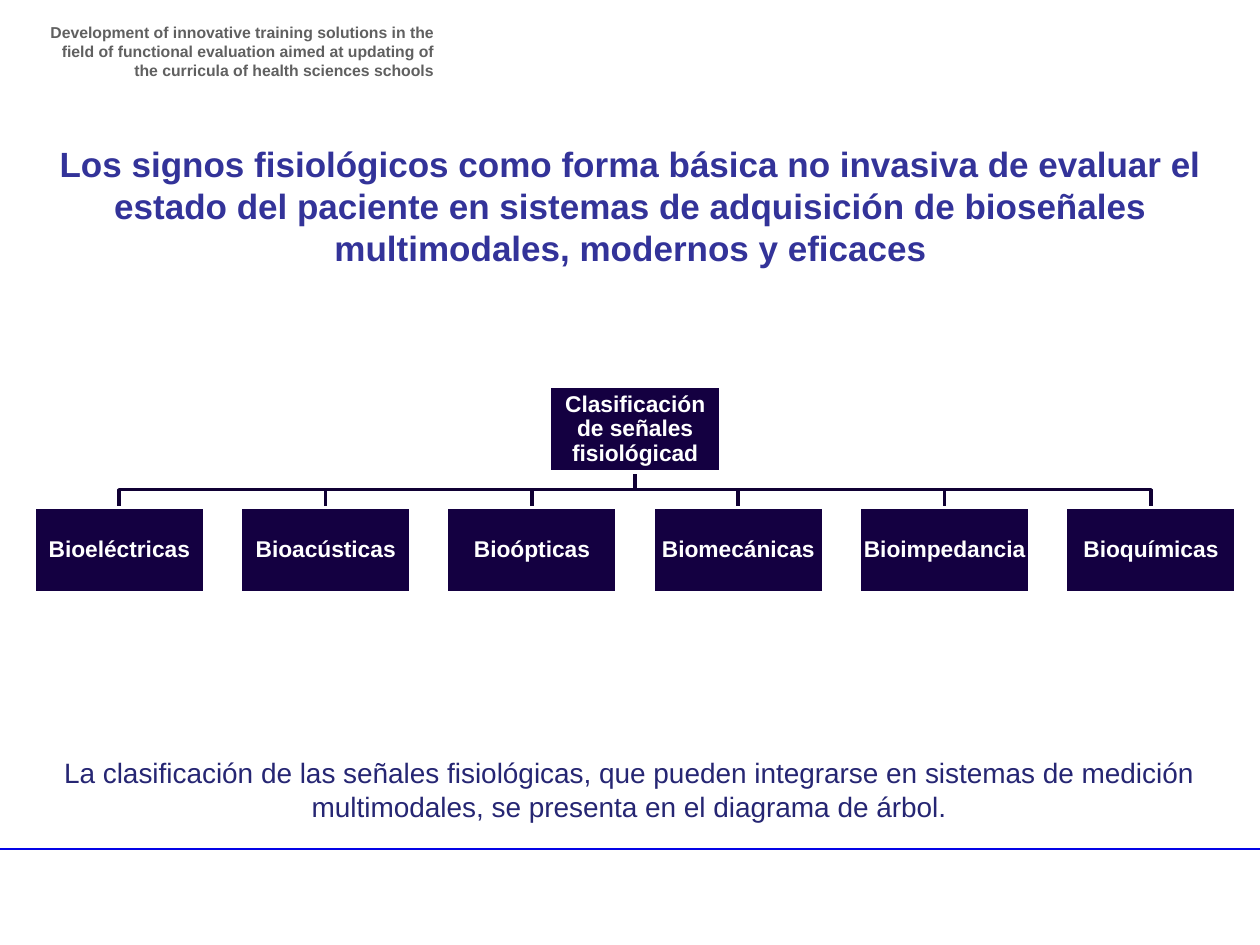
from dataclasses import dataclass

from lxml.etree import SubElement
from pptx import Presentation
from pptx.dml.color import RGBColor
from pptx.enum.shapes import MSO_CONNECTOR as Connector, MSO_SHAPE as Shape
from pptx.enum.text import MSO_ANCHOR as Anchor, MSO_AUTO_SIZE as AutoSize, PP_ALIGN as Align
from pptx.oxml.ns import qn
from pptx.util import Pt


@dataclass(frozen=True)
class Theme:
    font: str = "Arial"
    header: str = "606060"
    title: str = "333399"
    caption: str = "262673"
    box: str = "140041"
    branch: str = "100034"
    rule: str = "0404E6"
    white: str = "FFFFFF"
    header_size: float = 9
    title_size: float = 20
    caption_size: float = 16
    box_size: float = 13
    tree_line: float = 2


@dataclass(frozen=True)
class Node:
    label: str
    left: float
    top: float
    width: float = 97.5
    height: float = 48.7

    @property
    def center(self) -> float:
        return self.left + self.width / 2

    @property
    def bottom(self) -> float:
        return self.top + self.height


THEME = Theme()
LEAF_LEFT, LEAF_TOP, LEAF_PITCH = 19.4, 290, 117.9
ROOT_TOP = 221
SIGNAL_TYPES = ["Bioeléctricas", "Bioacústicas", "Bioópticas",
                "Biomecánicas", "Bioimpedancia", "Bioquímicas"]


def color(code: str) -> RGBColor:
    return RGBColor.from_string(code)


def write(shape, text: str, size: float, ink: str, bold: bool, align: Align) -> None:
    """Set one formatted paragraph in a shape."""
    frame = shape.text_frame
    frame.text = text
    frame.word_wrap = True
    frame.auto_size = AutoSize.NONE
    paragraph = frame.paragraphs[0]
    paragraph.alignment = align
    font = paragraph.runs[0].font
    font.name, font.size, font.bold = THEME.font, Pt(size), bold
    font.color.rgb = color(ink)


def draw_branch(slide, parent: Node, child: Node) -> None:
    """Elbow from the parent's bottom to the child's top."""
    middle = (parent.bottom + child.top) / 2
    builder = slide.shapes.build_freeform(Pt(parent.center), Pt(parent.bottom))
    builder.add_line_segments(
        [(Pt(parent.center), Pt(middle)), (Pt(child.center), Pt(middle)),
         (Pt(child.center), Pt(child.top))], close=False)
    branch = builder.convert_to_shape()
    branch.shadow.inherit = False
    branch.fill.background()
    branch.line.color.rgb = color(THEME.branch)
    branch.line.width = Pt(THEME.tree_line)


def draw_node(slide, node: Node) -> None:
    box = slide.shapes.add_shape(Shape.RECTANGLE, Pt(node.left), Pt(node.top),
                                 Pt(node.width), Pt(node.height))
    box.shadow.inherit = False
    box.fill.solid()
    box.fill.fore_color.rgb = color(THEME.box)
    box.line.color.rgb = color(THEME.white)
    box.line.width = Pt(THEME.tree_line)
    write(box, node.label, THEME.box_size, THEME.white, True, Align.CENTER)
    frame = box.text_frame
    frame.vertical_anchor = Anchor.MIDDLE
    frame.margin_left = frame.margin_right = Pt(0.7)
    frame.margin_top = frame.margin_bottom = Pt(0.7)
    frame.paragraphs[0].line_spacing = 0.9


def main() -> None:
    prs = Presentation()
    prs.slide_width, prs.slide_height = Pt(720), Pt(540)
    slide = prs.slides.add_slide(prs.slide_layouts[5])

    # Footer rule
    rule = slide.shapes.add_connector(Connector.STRAIGHT, Pt(-3.6), Pt(485.3), Pt(720), Pt(485.3))
    rule.line.color.rgb = color(THEME.rule)
    rule.line.width = Pt(1)
    SubElement(rule._element.spPr, qn("a:effectLst"))

    # Project header
    header = slide.shapes.add_textbox(Pt(20.2), Pt(9.4), Pt(234.7), Pt(33.8))
    write(header, "Development of innovative training solutions in the ﬁeld of functional "
          "evaluation aimed at updating of the curricula of health sciences schools",
          THEME.header_size, THEME.header, True, Align.RIGHT)

    # Title
    title = slide.shapes.title
    title.left, title.top, title.width, title.height = Pt(14.4), Pt(77.8), Pt(692), Pt(104.4)
    write(title, "Los signos fisiológicos como forma básica no invasiva de evaluar el estado del "
          "paciente en sistemas de adquisición de bioseñales multimodales, modernos y eficaces",
          THEME.title_size, THEME.title, True, Align.CENTER)
    title.text_frame.vertical_anchor = Anchor.TOP

    # Caption
    caption = slide.shapes.add_textbox(Pt(28), Pt(428.4), Pt(663), Pt(46))
    write(caption, "La clasificación de las señales fisiológicas, que pueden integrarse en sistemas "
          "de medición multimodales, se presenta en el diagrama de árbol.",
          THEME.caption_size, THEME.caption, False, Align.CENTER)

    # Classification tree: the root is centred over its leaves
    leaves = [Node(label, LEAF_LEFT + i * LEAF_PITCH, LEAF_TOP)
              for i, label in enumerate(SIGNAL_TYPES)]
    root_left = (leaves[0].left + leaves[-1].left) / 2
    root = Node("Clasificación de señales fisiológicad", root_left, ROOT_TOP)
    for leaf in leaves:
        draw_branch(slide, root, leaf)
    for node in [root, *leaves]:
        draw_node(slide, node)

    prs.save("out.pptx")


if __name__ == "__main__":
    main()
